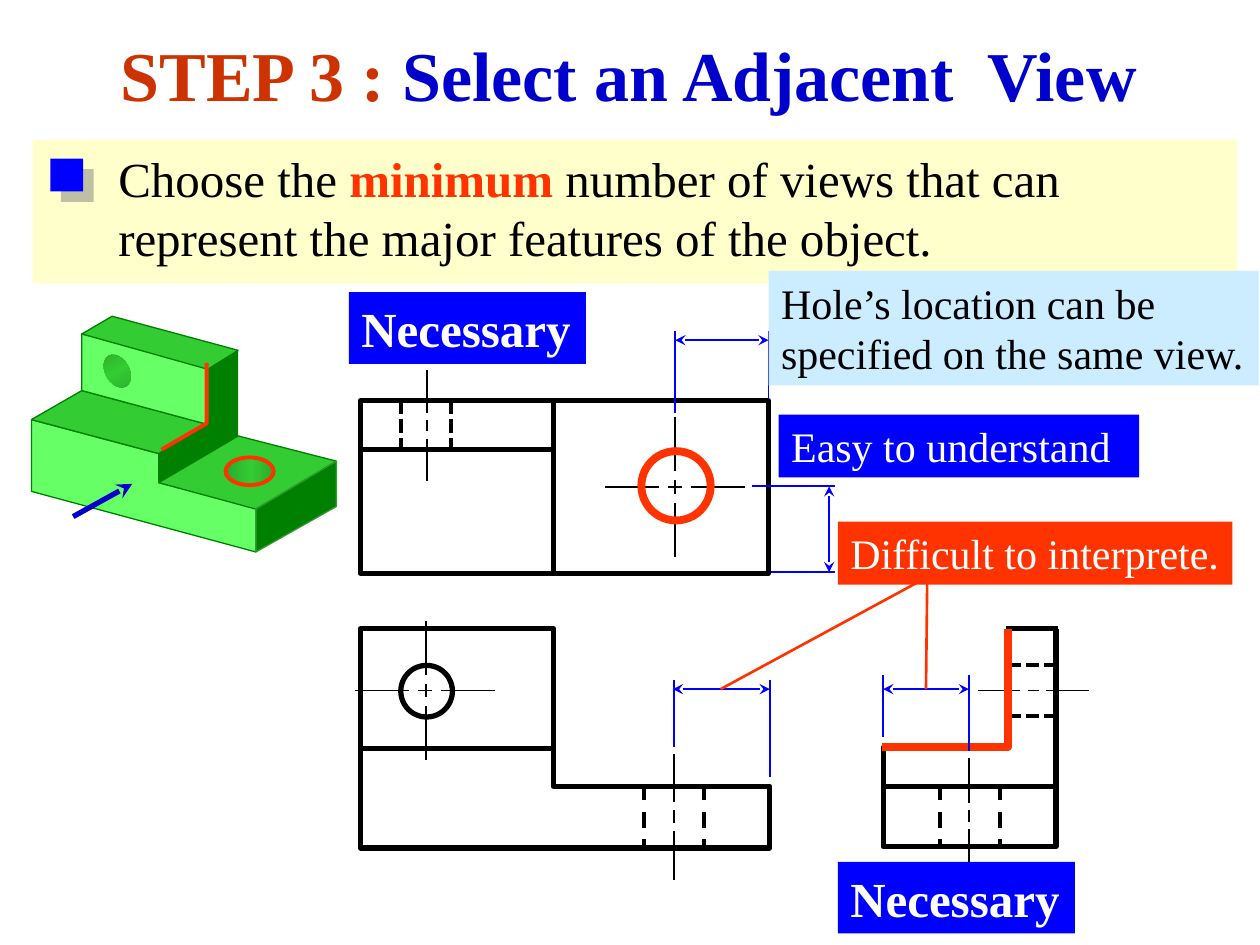
import copy
from dataclasses import dataclass

from lxml import etree
from pptx import Presentation
from pptx.dml.color import RGBColor
from pptx.enum import dml, shapes, text
from pptx.oxml import ns
from pptx.util import Pt


@dataclass(frozen=True)
class Theme:
    font: str = "Times New Roman"
    title: int = 40
    body: int = 28
    label: int = 24
    white: str = "FFFFFF"
    black: str = "000000"
    blue: str = "0000FF"
    navy: str = "0000CC"
    red: str = "FF3300"
    rust: str = "CC3300"
    cream: str = "FFFFCC"
    sky: str = "CCECFF"
    gray: str = "808080"
    light: str = "66FF66"
    green: str = "33CC33"
    dark: str = "008000"
    edge: str = "339933"
    hole: str = "2BAB2B"
    outline: float = 3
    hidden: float = 2.25
    thin: float = 1
    hair: float = 0.75
    bold: float = 4.5


def rgb(color):
    return RGBColor.from_string(color)


def child(parent, tag, **attributes):
    return etree.SubElement(parent, ns.qn(tag), **attributes)


class Drawing:
    def __init__(self, slide, theme):
        self.slide = slide
        self.theme = theme

    def paint(self, sp, fill=None, line=None, width=1):
        sp.shadow.inherit = False
        if fill:
            sp.fill.solid()
            sp.fill.fore_color.rgb = rgb(fill)
        else:
            sp.fill.background()
        if line:
            sp.line.color.rgb = rgb(line)
            sp.line.width = Pt(width)
        else:
            sp.line.fill.background()
        return sp

    def shape(self, box, fill=None, line=None, width=1, kind=shapes.MSO_SHAPE.RECTANGLE):
        sp = self.slide.shapes.add_shape(kind, *map(Pt, box))
        return self.paint(sp, fill, line, width)

    def ellipse(self, box, line=None, width=1):
        return self.shape(box, None, line, width, shapes.MSO_SHAPE.OVAL)

    def hole(self, box, line=None, rotation=0):
        sp = self.ellipse(box, line, self.theme.hair)
        sp.rotation = rotation
        sp.fill.gradient()
        sp.fill.gradient_angle = 0
        first, last = sp.fill.gradient_stops
        for stop, color, position in ((first, self.theme.hole, 0), (last, self.theme.green, 0.5)):
            stop.color.rgb = rgb(color)
            stop.position = position
        stops = sp._element.find(".//" + ns.qn("a:gsLst"))
        end = copy.deepcopy(stops[0])
        end.set("pos", "100000")
        stops.append(end)

    def drop_shadow(self, sp):
        effects = sp._element.spPr.find(ns.qn("a:effectLst"))
        shadow = child(effects, "a:outerShdw", dist=str(Pt(8.5)), dir="2700000",
                       algn="ctr", rotWithShape="0")
        color = child(shadow, "a:srgbClr", val=self.theme.gray)
        child(color, "a:alpha", val="50000")

    def poly(self, points, fill=None, line=None, width=1, closed=True):
        start, *rest = [(Pt(x), Pt(y)) for x, y in points]
        builder = self.slide.shapes.build_freeform(*start, scale=1.0)
        builder.add_line_segments(rest, close=closed)
        return self.paint(builder.convert_to_shape(), fill, line, width)

    def line(self, x1, y1, x2, y2, color, width, dash=False, heads=()):
        cn = self.slide.shapes.add_connector(shapes.MSO_CONNECTOR.STRAIGHT, *map(Pt, (x1, y1, x2, y2)))
        cn.line.color.rgb = rgb(color)
        cn.line.width = Pt(width)
        if dash:
            cn.line.dash_style = dml.MSO_LINE.DASH
        for tag in heads:
            child(cn._element.spPr.find(ns.qn("a:ln")), tag, type="stealth")
        child(cn._element.spPr, "a:effectLst")

    def edge(self, *ends):
        self.line(*ends, self.theme.black, self.theme.outline)

    def hidden(self, *ends):
        self.line(*ends, self.theme.black, self.theme.hidden, dash=True)

    def hidden_segments(self, x, y, dx, dy):
        for step in (0, 10.6, 21.2):
            a, b = step, step + 7.6
            self.line(x + a * dx, y + a * dy, x + b * dx, y + b * dy,
                      self.theme.black, self.theme.hidden)

    def center_line(self, x, y, half, dx, dy):
        for a, b in ((-0.1, 0.1), (-0.23, -1), (0.23, 1)):
            a, b = a * half, b * half
            self.line(x + a * dx, y + a * dy, x + b * dx, y + b * dy,
                      self.theme.black, self.theme.thin)

    def dimension(self, extensions, arrow):
        for ends in extensions:
            self.line(*ends, self.theme.blue, self.theme.thin)
        self.line(*arrow, self.theme.blue, self.theme.thin, heads=("a:headEnd", "a:tailEnd"))

    def set_text(self, sp, runs, size, align=text.PP_ALIGN.LEFT, wrap=True):
        tf = sp.text_frame
        tf.word_wrap = wrap
        tf.auto_size = text.MSO_AUTO_SIZE.NONE
        tf.vertical_anchor = text.MSO_ANCHOR.TOP
        p = tf.paragraphs[0]
        p.alignment = align
        for content, color, bold in runs:
            for i, part in enumerate(content.split("\n")):
                if i:
                    p.add_line_break()
                r = p.add_run()
                r.text = part
                r.font.name = self.theme.font
                r.font.size = Pt(size)
                r.font.bold = bold
                r.font.color.rgb = rgb(color)

    def title(self, box, runs):
        sp = self.slide.shapes.title
        sp.left, sp.top, sp.width, sp.height = map(Pt, box)
        self.set_text(sp, runs, self.theme.title, text.PP_ALIGN.CENTER)

    def textbox(self, box, runs):
        sp = self.slide.shapes.add_textbox(*map(Pt, box))
        self.set_text(sp, runs, self.theme.body, wrap=False)

    def label(self, box, content, fill, color, size, bold=False):
        self.set_text(self.shape(box, fill), [(content, color, bold)], size, wrap=not bold)


def main():
    t = Theme()
    prs = Presentation()
    prs.slide_width, prs.slide_height = Pt(720), Pt(540)
    d = Drawing(prs.slides.add_slide(prs.slide_layouts[5]), t)

    d.title((-0.7, 14.4, 720, 55.4),
            [("STEP 3 : ", t.rust, True), ("Select an Adjacent  View", t.navy, True)])
    d.shape((18.7, 79.9, 688.3, 82.1), t.cream)
    d.textbox((60.5, 81.4, 565.2, 74.9), [
        ("Choose the ", t.black, False), ("minimum", t.red, True),
        (" number of views that can \nrepresent the major features of the object.", t.black, False)])
    d.drop_shadow(d.shape((28.8, 90.7, 18.7, 18.7), t.blue))

    d.ellipse((229, 380.2, 29.5, 29.5), t.black, t.outline)
    d.poly([(205.9, 359.3), (205.9, 484.6), (439.9, 484.6), (439.9, 449.3),
            (316.1, 449.3), (316.1, 359.3)], None, t.black, t.outline)
    d.edge(205.9, 427.7, 316.1, 427.7)

    d.poly([(205.9, 327.6), (205.9, 229), (439.2, 229), (439.2, 327.6)], None, t.black, t.outline)
    d.edge(205.9, 257, 316.1, 257)
    d.edge(316.1, 229, 316.1, 327.6)

    d.edge(504, 449.3, 603.4, 449.3)
    d.edge(604.8, 359.3, 574.6, 359.3)
    d.poly([(576, 359.3), (576, 427), (504.7, 427), (504.7, 483.8), (603.4, 483.8),
            (603.4, 359.3)], None, t.black, t.outline, closed=False)

    for x in (367.9, 402.5, 537.1, 571.7):
        d.hidden(x, 448.3, x, 483.5)
    for x in (229, 257.8):
        d.hidden_segments(x, 229, 0, 1)
    for y in (380.2, 409):
        d.hidden_segments(604.4, y, -1, 0)
    for x, y, half in ((385.2, 466.6, 36), (243.4, 394.6, 39.6), (244.1, 243.4, 31.7),
                       (385.9, 278.2, 40), (553.7, 466.2, 32.8)):
        d.center_line(x, y, half, 0, 1)
    for x, y, half in ((243, 394.6, 40), (385.9, 278.2, 40), (590.4, 394.6, 31.7)):
        d.center_line(x, y, half, 1, 0)

    d.poly([(504, 427), (576, 427), (576, 359.3)], None, t.red, t.bold, closed=False)
    for color, width in ((t.black, t.outline), (t.red, t.bold)):
        d.ellipse((366.5, 257.8, 39.6, 39.6), color, width)

    d.dimension([(429.8, 277.9, 477.4, 277.9), (440.6, 326.9, 477.4, 326.9)],
                (473.8, 326.9, 473.8, 277.9))
    d.dimension([(385.9, 236.2, 385.9, 189.4), (439.2, 228.2, 439.2, 189.4)],
                (439.2, 194.4, 385.9, 194.4))

    faces = [
        ([(90.7, 275.8), (90.7, 258.5), (118.8, 241.9), (118.8, 209.5), (136.1, 200.2),
          (136.1, 249.1)], t.dark, None),
        ([(146.2, 315.4), (18, 280.8), (18, 239.8), (90.7, 259.2), (90.7, 275.8),
          (146.2, 290.2)], t.light, t.dark),
        ([(18, 239.8), (46.8, 223.2), (118.8, 242.6), (90.7, 259.2)], t.green, t.dark),
        ([(118.8, 242.6), (46.8, 223.2), (46.8, 190.8), (118.8, 210.2)], t.light, t.dark),
        ([(90.7, 275.8), (146.2, 290.9), (192.2, 263.5), (136.1, 249.1)], t.green, t.dark),
        ([(146.2, 290.9), (146.2, 315.4), (192.2, 289.4), (192.2, 263.5)], t.dark, t.edge),
        ([(136.1, 200.2), (64.1, 180.7), (46.8, 190.8), (118.8, 211)], t.green, t.dark),
    ]
    for points, fill, line in faces:
        d.poly(points, fill, line, t.hair)
    d.line(41.8, 295.2, 75.6, 276.5, t.navy, t.outline, heads=("a:tailEnd",))
    d.hole((56.9, 205.2, 20.2, 13.7), rotation=60)
    d.hole((129.6, 261.4, 27.4, 15.8), t.dark)
    d.poly([(118.1, 207.4), (118.1, 241.9), (92.2, 257)], None, t.red, t.hidden, closed=False)
    d.ellipse((128.9, 261.4, 27.4, 15.8), t.red, t.hidden)

    for x, y in ((199.4, 167), (478.8, 492.5)):
        d.label((x, y, 135.4, 41), "Necessary", t.blue, t.white, t.body, bold=True)
    d.label((439.2, 154.8, 280.1, 65.5), "Hole’s location can be specified on the same view.",
            t.sky, t.black, t.label)
    d.dimension([(385.2, 427, 385.2, 388.8), (439.9, 444.2, 439.9, 388.8)],
                (384.5, 393.8, 439.9, 393.8))
    d.dimension([(504.7, 421.2, 504.7, 385.9), (553.7, 429.1, 553.7, 385.9)],
                (504.7, 393.8, 553.7, 393.8))
    d.label((478.8, 298.1, 225.4, 36), "Difficult to interprete.", t.red, t.white, t.label)
    d.poly([(411.8, 393.8), (529.9, 329.8), (529.2, 393.8)], None, t.red, 1.5, closed=False)
    d.label((445, 236.9, 205.9, 36), "Easy to understand", t.blue, t.white, t.label)

    prs.save("out.pptx")


if __name__ == "__main__":
    main()
